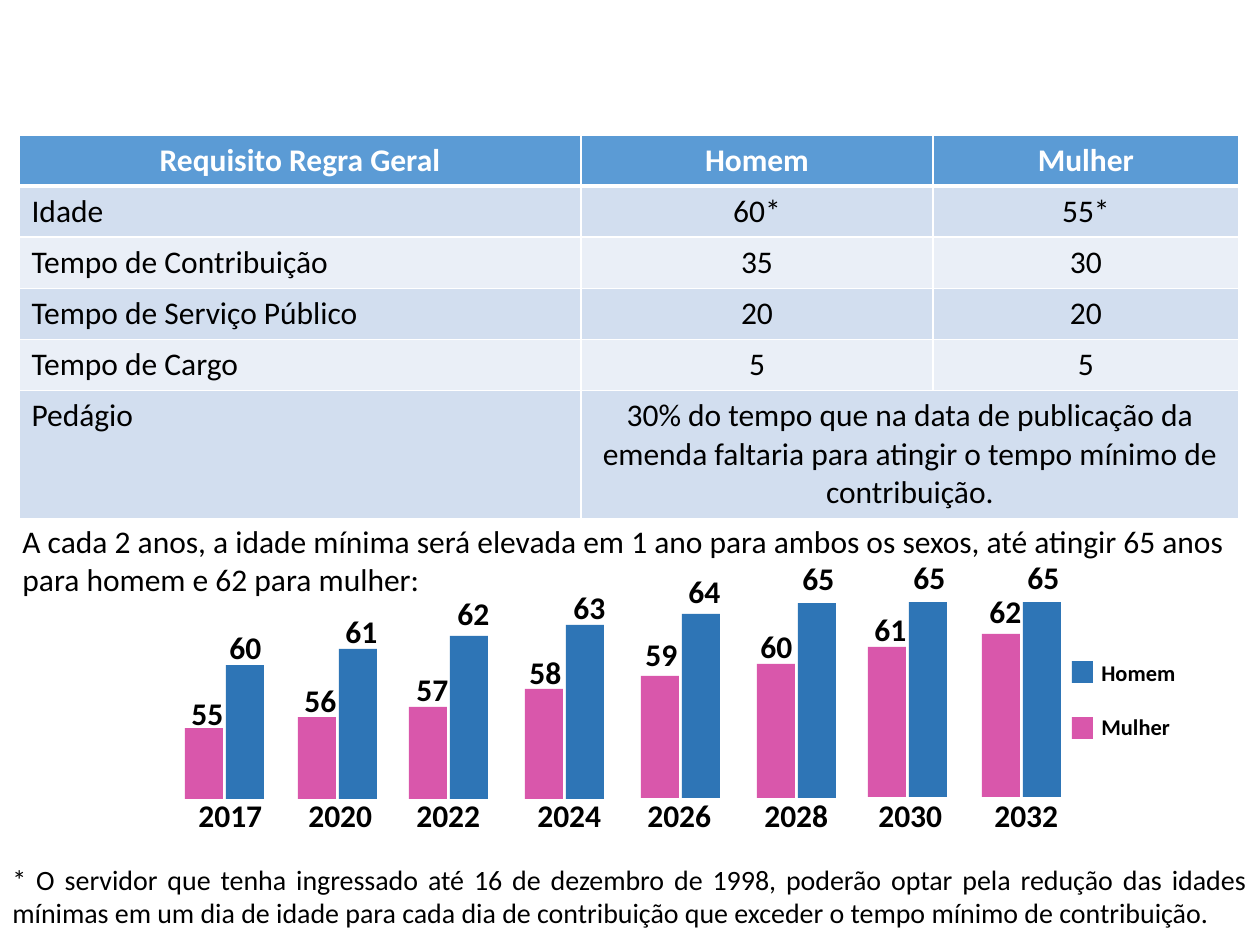
from pptx import Presentation
from pptx import util as u
from pptx.dml.color import RGBColor
from pptx.enum import shapes, text
from pptx.oxml import parse_xml
from pptx.oxml.ns import nsdecls

COLORS = {"header": "5B9BD5", "band": "D2DEEF", "light": "EAEFF7", "white": "FFFFFF",
          "black": "000000", "Homem": "2E75B6", "Mulher": "D957AB"}
FONT = "Calibri"
PX = 914400 / 126

ROWS = [
    ("Requisito Regra Geral", "Homem", "Mulher"),
    ("Idade", "60*", "55*"),
    ("Tempo de Contribuição", "35", "30"),
    ("Tempo de Serviço Público", "20", "20"),
    ("Tempo de Cargo", "5", "5"),
    ("Pedágio", "30% do tempo que na data de publicação da emenda faltaria para atingir "
     "o tempo mínimo de contribuição.", ""),
]
COLUMN_WIDTHS = (562, 352, 306)
ROW_HEIGHTS = (51, 51, 51, 51, 51, 127)

# year, year label left, bars left, baseline, women's age, men's age
PERIODS = [
    ("2017", 186, 185, 799, 55, 60),
    ("2020", 296, 298, 799, 56, 61),
    ("2022", 404, 409, 799, 57, 62),
    ("2024", 525, 525, 799, 58, 63),
    ("2026", 635, 641, 798, 59, 64),
    ("2028", 752, 757, 798, 60, 65),
    ("2030", 866, 868, 797, 61, 65),
    ("2032", 982, 982, 797, 62, 65),
]
# age: bar height, label rise above the bar, label shift to the left
AGES = {
    55: (71, 40, 6), 56: (82, 42, 6), 57: (92, 43, 5), 58: (110, 42, 8),
    59: (122, 47, 8), 60: (134, 43, 9), 61: (150, 43, 6), 62: (163, 48, 5),
    63: (174, 43, 5), 64: (184, 48, 6), 65: (195, 50, 8),
}
BAR_WIDTH, BAR_STEP = 38, 41
INTRO = ("A cada 2 anos, a idade mínima será elevada em 1 ano para ambos os sexos, "
         "até atingir 65 anos para homem e 62 para mulher:")
FOOTNOTE = ("* O servidor que tenha ingressado até 16 de dezembro de 1998, poderão optar pela "
            "redução das idades mínimas em um dia de idade para cada dia de contribuição "
            "que exceder o tempo mínimo de contribuição.")


def px(value):
    return u.Emu(round(value * PX))


def color(name):
    return RGBColor.from_string(COLORS[name])


def write(frame, content, size=18, bold=False, ink="black", align=text.PP_ALIGN.LEFT, gap=0):
    for index, line in enumerate(content.split("\n")):
        paragraph = frame.add_paragraph() if index else frame.paragraphs[0]
        paragraph.alignment = align
        if index:
            paragraph.space_before = u.Pt(gap)
        run = paragraph.add_run()
        run.text = line
        run.font.name, run.font.size, run.font.bold = FONT, u.Pt(size), bold
        run.font.color.rgb = color(ink)


def add_text(parent, content, left, top, width, height, wrap=False, **style):
    frame = parent.add_textbox(px(left), px(top), px(width), px(height)).text_frame
    frame.word_wrap = wrap
    frame.auto_size = text.MSO_AUTO_SIZE.SHAPE_TO_FIT_TEXT
    write(frame, content, **style)


def add_block(parent, left, top, width, height, fill):
    shape = parent.add_shape(shapes.MSO_SHAPE.RECTANGLE, px(left), px(top), px(width), px(height))
    shape.shadow.inherit = False
    shape.fill.solid()
    shape.fill.fore_color.rgb = color(fill)
    shape.line.fill.background()


def set_borders(cell, bottom):
    properties = cell._tc.get_or_add_tcPr()
    sides = (("lnL", 1), ("lnR", 1), ("lnT", 1), ("lnB", bottom))
    for position, (side, points) in enumerate(sides):
        properties.insert(position, parse_xml(
            f'<a:{side} {nsdecls("a")} w="{u.Pt(points)}"><a:solidFill>'
            f'<a:srgbClr val="{COLORS["white"]}"/></a:solidFill></a:{side}>'))


def add_requirements(slide):
    table = slide.shapes.add_table(len(ROWS), len(COLUMN_WIDTHS), px(19), px(135),
                                   px(sum(COLUMN_WIDTHS)), px(sum(ROW_HEIGHTS))).table
    for column, width in zip(table.columns, COLUMN_WIDTHS):
        column.width = px(width)
    for r, (values, height) in enumerate(zip(ROWS, ROW_HEIGHTS)):
        table.rows[r].height = px(height)
        header = r == 0
        for c, value in enumerate(values):
            cell = table.cell(r, c)
            cell.fill.solid()
            cell.fill.fore_color.rgb = color("header" if header else "band" if r % 2 else "light")
            set_borders(cell, 3 if header else 1)
            if value:
                centered = header or c > 0
                write(cell.text_frame, value, bold=header, ink="white" if header else "black",
                      align=text.PP_ALIGN.CENTER if centered else text.PP_ALIGN.LEFT)
    table.cell(5, 1).merge(table.cell(5, 2))


def add_bar(slide, age, left, baseline, fill):
    height, rise, shift = AGES[age]
    top = baseline - height
    group = slide.shapes.add_group_shape().shapes
    add_block(group, left, top, BAR_WIDTH, height, fill)
    add_text(group, str(age), left - shift, top - rise, 57, 51, bold=True)


def main():
    presentation = Presentation()
    presentation.slide_width, presentation.slide_height = px(1260), px(945)
    slide = presentation.slides.add_slide(presentation.slide_layouts[6])

    add_requirements(slide)
    for year, year_left, left, baseline, woman, man in PERIODS:
        add_text(slide.shapes, year, year_left, 790, 89, 51, bold=True)
        add_bar(slide, woman, left, baseline, "Mulher")
        add_bar(slide, man, left + BAR_STEP, baseline, "Homem")

    add_text(slide.shapes, "Homem\nMulher", 1089, 653, 115, 93, size=12.8, bold=True, gap=15.6)
    for index, series in enumerate(("Homem", "Mulher")):
        add_block(slide.shapes, 1072, 661 + 56 * index, 21, 22, series)

    add_text(slide.shapes, INTRO, 10, 516, 1229, 89, wrap=True)
    add_text(slide.shapes, FOOTNOTE, 0, 856, 1260, 81, wrap=True, size=16,
             align=text.PP_ALIGN.JUSTIFY)
    presentation.save("out.pptx")


if __name__ == "__main__":
    main()
